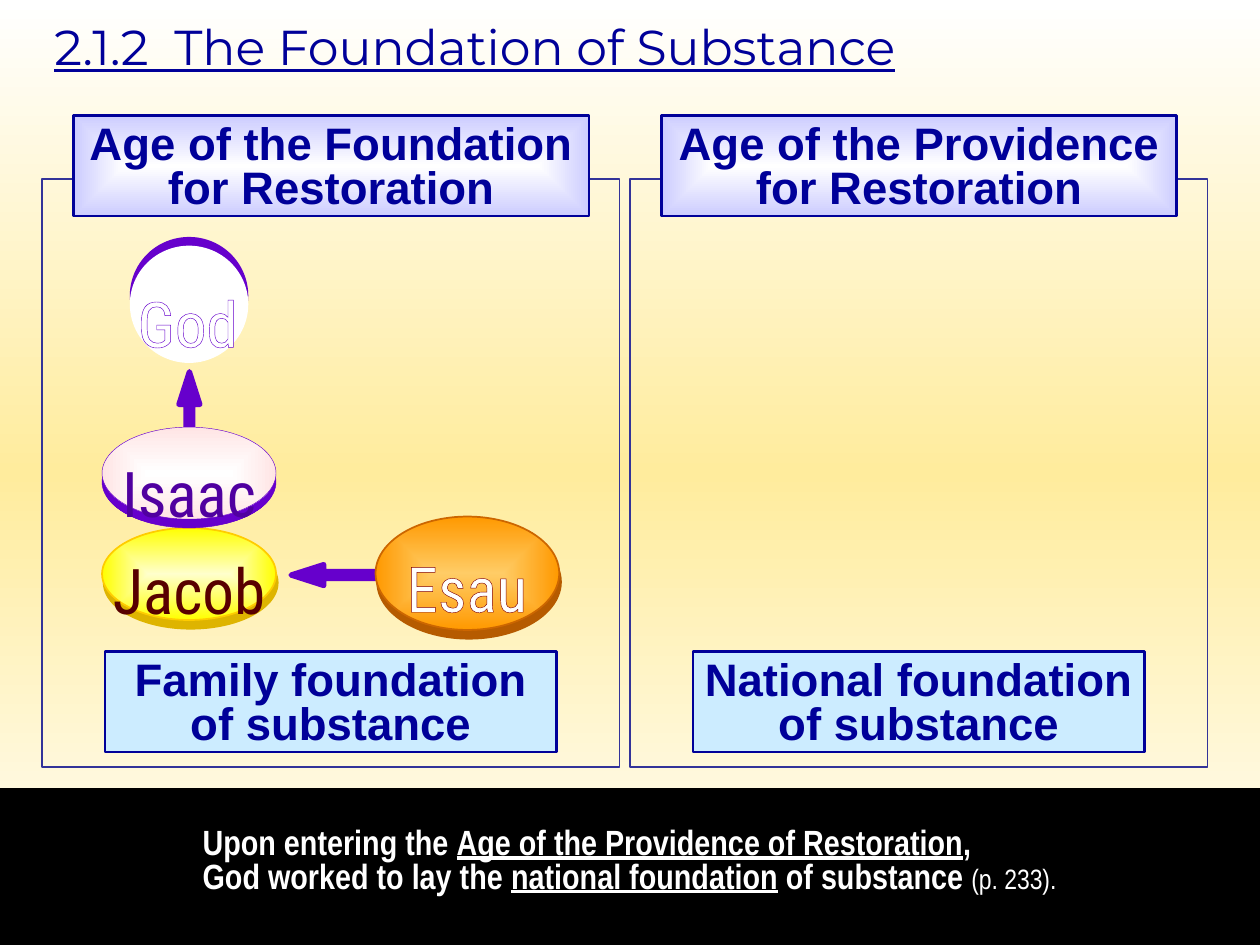
from dataclasses import dataclass
from typing import Optional

from lxml import etree
from pptx import Presentation
from pptx.dml.color import RGBColor
from pptx.enum import shapes, text
from pptx.oxml.ns import qn
from pptx.util import Pt

COLORS = {
    "white": "FFFFFF", "black": "000000", "sand": "FFEC9D", "navy": "000099",
    "frame": "333399", "lavender": "CCCCFF", "sky": "CCECFF",
    "purple": "6600CC", "deep purple": "5000A0", "blush": "FFE5E5",
    "cream": "FFFFCC", "yellow": "FFFF00", "gold": "FFCC00",
    "dark gold": "DEB400", "maroon": "580000", "peach": "FFCC66",
    "orange": "FF9900", "rust": "CC6600", "brown": "B65B00", "wine": "800000",
}
RECTANGLE = shapes.MSO_SHAPE.RECTANGLE
OVAL = shapes.MSO_SHAPE.OVAL
CENTER = text.PP_ALIGN.CENTER


@dataclass
class Box:
    left: float
    top: float
    width: float
    height: float

    def lengths(self):
        return [Pt(v) for v in (self.left, self.top, self.width, self.height)]


@dataclass
class Style:
    font: str
    size: float
    color: str
    bold: bool = False
    underline: bool = False
    outline: Optional[tuple] = None  # color, width


@dataclass
class Panel:
    left: float
    heading: str
    footing: str


@dataclass
class Figure:
    name: str
    oval: Box
    label: Box
    fill: tuple  # center, edge
    line: Optional[tuple]  # color, width
    shadow: tuple  # color, distance, degrees
    style: Style


def rgb(name: str) -> RGBColor:
    return RGBColor.from_string(COLORS[name])


def add_color(parent, name: str):
    return etree.SubElement(parent, qn("a:srgbClr"), val=COLORS[name])


def set_gradient(element, names: tuple, angle: Optional[int] = None) -> None:
    """Fill the gradient of an element: linear with an angle, else from the center."""
    gradient = element.find(".//" + qn("a:gradFill"))
    for child in list(gradient):
        gradient.remove(child)
    stops = etree.SubElement(gradient, qn("a:gsLst"))
    for index, name in enumerate(names):
        position = 100000 * index // (len(names) - 1)
        add_color(etree.SubElement(stops, qn("a:gs"), pos=str(position)), name)
    if angle is not None:
        etree.SubElement(gradient, qn("a:lin"), ang=str(angle * 60000), scaled="0")
    else:
        path = etree.SubElement(gradient, qn("a:path"), path="shape")
        etree.SubElement(path, qn("a:fillToRect"), l="50000", t="50000", r="50000", b="50000")


def add_shape(slide, kind, box: Box, fill: tuple = (), line: Optional[tuple] = None):
    shape = slide.shapes.add_shape(kind, *box.lengths())
    shape.shadow.inherit = False
    if len(fill) > 1:
        shape.fill.gradient()
        set_gradient(shape.element, fill)
    elif fill:
        shape.fill.solid()
        shape.fill.fore_color.rgb = rgb(fill[0])
    else:
        shape.fill.background()
    if line:
        shape.line.color.rgb = rgb(line[0])
        shape.line.width = Pt(line[1])
    else:
        shape.line.fill.background()
    return shape


def add_shadow(shape, color: str, distance: float, degrees: int) -> None:
    effects = shape.element.spPr.find(qn("a:effectLst"))
    shadow = etree.SubElement(effects, qn("a:outerShdw"), dist=str(Pt(distance)),
                              dir=str(degrees * 60000), algn="ctr", rotWithShape="0")
    add_color(shadow, color)


def format_run(run, style: Style) -> None:
    font = run.font
    font.name, font.size = style.font, Pt(style.size)
    font.bold, font.underline = style.bold, style.underline
    font.color.rgb = rgb(style.color)
    if style.outline:
        color, width = style.outline
        line = etree.Element(qn("a:ln"), w=str(Pt(width)))
        add_color(etree.SubElement(line, qn("a:solidFill")), color)
        run.font.fill  # the outline goes before the fill
        run.font._element.insert(0, line)


def add_text(slide, box: Box, lines: list, align=None, spacing=None, wrap=True) -> None:
    """Each line is a list of (words, style) pairs."""
    frame = slide.shapes.add_textbox(*box.lengths()).text_frame
    frame.word_wrap = wrap
    frame.auto_size = text.MSO_AUTO_SIZE.SHAPE_TO_FIT_TEXT if wrap else text.MSO_AUTO_SIZE.NONE
    for index, line in enumerate(lines):
        paragraph = frame.add_paragraph() if index else frame.paragraphs[0]
        paragraph.alignment = align
        paragraph.line_spacing = spacing
        for words, style in line:
            run = paragraph.add_run()
            run.text = words
            format_run(run, style)


def add_panel(slide, panel: Panel) -> None:
    left = panel.left
    style = Style("Arial", 26, "navy", bold=True)
    add_shape(slide, RECTANGLE, Box(left, 102.25, 330, 336), line=("frame", 0.75))
    plates = [
        (panel.heading, Box(left + 18, 66, 294.5, 57.6), 306, ("white", "lavender")),
        (panel.footing, Box(left + 36, 372.25, 258, 57.6), 270, ("sky",)),
    ]
    for words, box, text_width, fill in plates:
        add_shape(slide, RECTANGLE, box, fill, ("navy", 1.5))
        text_left = box.left + (box.width - text_width) / 2
        add_text(slide, Box(text_left, box.top + 2.2, text_width, box.height),
                 [[(line, style)] for line in words.split("\n")], CENTER, 0.8)


def add_arrow(slide, box: Box, rotation: int) -> None:
    arrow = add_shape(slide, shapes.MSO_SHAPE.DOWN_ARROW, box, ("purple",), ("purple", 3))
    arrow.adjustments[0], arrow.adjustments[1] = 0.33, 1.56
    arrow.rotation = rotation


def add_figure(slide, figure: Figure) -> None:
    oval = add_shape(slide, OVAL, figure.oval, figure.fill, figure.line)
    add_shadow(oval, *figure.shadow)
    add_text(slide, figure.label, [[(figure.name, figure.style)]], CENTER, wrap=False)


def name_style(color: str, outline: Optional[tuple] = None) -> Style:
    return Style("Roboto Condensed", 36, color, outline=outline)


PANELS = [
    Panel(24, "Age of the Foundation\nfor Restoration", "Family foundation\nof substance"),
    Panel(360, "Age of the Providence\nfor Restoration", "National foundation\nof substance"),
]
FIGURES = [
    Figure("God", Box(74.2, 140.4, 67.7, 67), Box(81.4, 159, 51.8, 31.7), ("white",), None,
           ("purple", 5, 270), name_style("white", ("purple", 3))),
    Figure("Jacob", Box(58.3, 301.7, 99.4, 52.6), Box(76.3, 311.8, 63.4, 28.8),
           ("cream", "yellow"), ("gold", 1), ("dark gold", 5.1, 79), name_style("maroon")),
    Figure("Esau", Box(214.6, 295.2, 105, 64.8), Box(233.3, 310.3, 67, 35.3),
           ("peach", "orange"), ("rust", 1), ("brown", 5.1, 79),
           name_style("white", ("wine", 2.25))),
    Figure("Isaac", Box(58.3, 244.1, 99.4, 52.6), Box(76.3, 256.3, 63.4, 28.8),
           ("white", "blush"), ("purple", 0.25), ("purple", 5, 90), name_style("deep purple")),
]


def main() -> None:
    presentation = Presentation()
    presentation.slide_width, presentation.slide_height = Pt(720), Pt(540)
    slide = presentation.slides.add_slide(presentation.slide_layouts[6])
    slide.background.fill.gradient()
    set_gradient(slide.element, ("white", "sand", "white"), 90)

    # Caption band
    add_shape(slide, RECTANGLE, Box(0, 450.7, 720, 89.3), ("black",), ("black", 0.75))
    plain = Style("Arial Narrow", 20, "white", bold=True)
    marked = Style("Arial Narrow", 20, "white", bold=True, underline=True)
    small = Style("Arial Narrow", 16, "white")
    add_text(slide, Box(108.7, 470.2, 503.3, 46), [
        [("Upon entering the ", plain), ("Age of the Providence of Restoration", marked),
         (",", plain)],
        [("God worked to lay the ", plain), ("national foundation", marked),
         (" of substance ", plain), ("(p. 233).", small)],
    ], spacing=0.8)

    # Two ages
    for panel in PANELS:
        add_panel(slide, panel)

    # Family relations
    add_arrow(slide, Box(102.2, 212.4, 12, 48), 180)
    add_arrow(slide, Box(184.3, 304.6, 12, 48), 90)
    for figure in FIGURES:
        add_figure(slide, figure)

    # Title
    add_text(slide, Box(24, 5.8, 564, 41),
             [[("2.1.2  The Foundation of Substance",
                Style("Montserrat", 28, "navy", underline=True))]])
    presentation.save("out.pptx")


if __name__ == "__main__":
    main()
